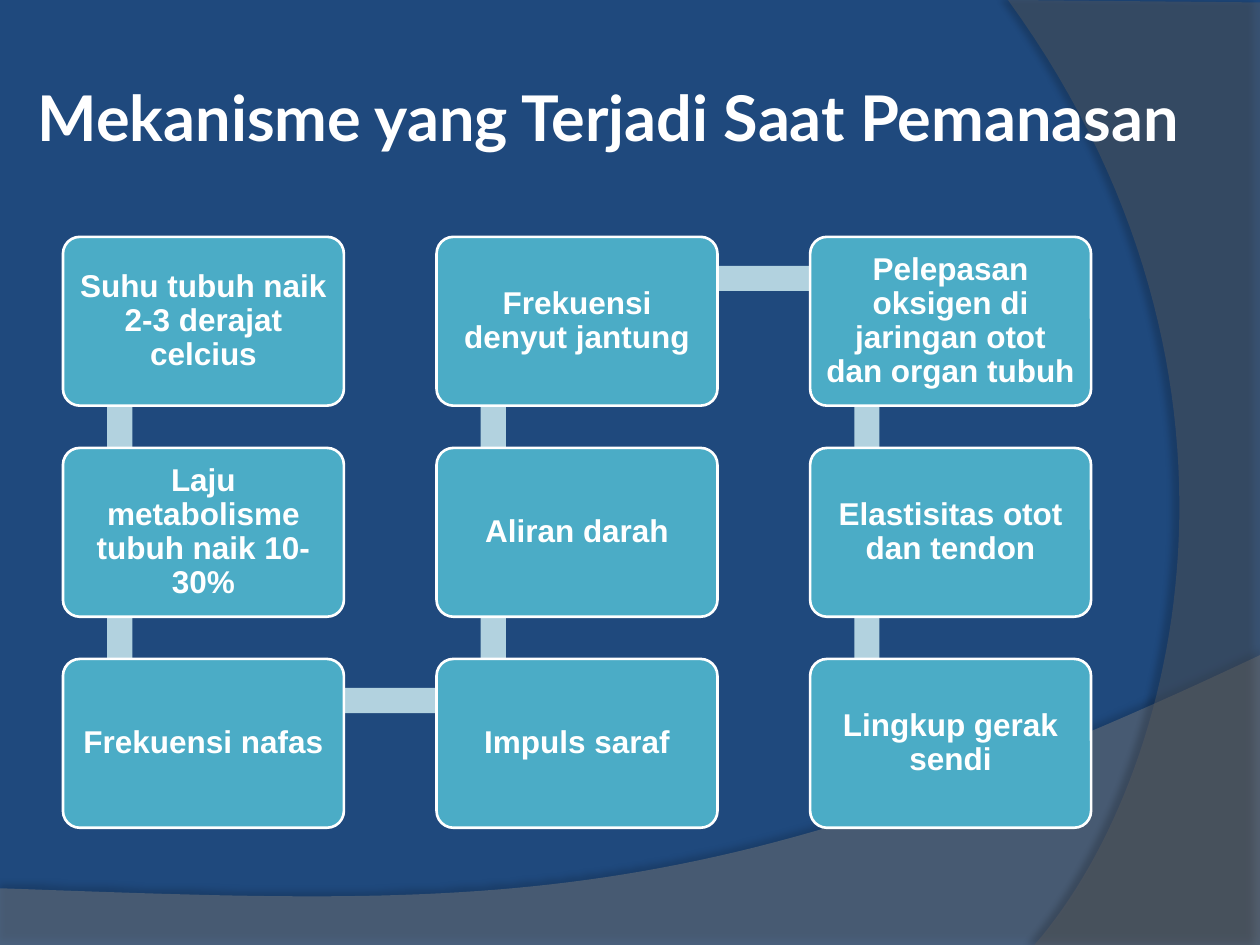
from lxml import etree
from pptx import Presentation
from pptx.dml.color import RGBColor
from pptx.enum.shapes import MSO_SHAPE
from pptx.enum.text import MSO_ANCHOR, PP_ALIGN
from pptx.oxml import parse_xml
from pptx.oxml.ns import nsdecls, qn
from pptx.util import Inches, Pt

NAVY = RGBColor(0x1F, 0x49, 0x7D)
GRAY = RGBColor(0x7F, 0x7F, 0x7F)
DARK_GRAY = RGBColor(0x5E, 0x5E, 0x5E)
TEAL = RGBColor(0x4B, 0xAC, 0xC6)
PALE_TEAL = RGBColor(0xB2, 0xD2, 0xDF)
WHITE = RGBColor(0xFF, 0xFF, 0xFF)

TITLE = "Mekanisme yang Terjadi Saat Pemanasan"
STEPS = [
    "Suhu tubuh naik 2-3 derajat celcius",
    "Laju metabolisme tubuh naik 10-30%",
    "Frekuensi nafas",
    "Impuls saraf",
    "Aliran darah",
    "Frekuensi denyut jantung",
    "Pelepasan oksigen di jaringan otot dan organ tubuh",
    "Elastisitas otot dan tendon",
    "Lingkup gerak sendi",
]
ROWS = 3
BOX_W, BOX_H = 2.23, 1.34
BAR_THICKNESS = 0.2


def curve(p0, p1, p2, p3, steps=60):
    """Points along a cubic Bezier curve."""
    points = []
    for i in range(steps + 1):
        t = i / steps
        u = 1 - t
        points.append(tuple(
            u**3 * a + 3 * u**2 * t * b + 3 * u * t**2 * c + t**3 * d
            for a, b, c, d in zip(p0, p1, p2, p3)))
    return points


def set_insets(tf, inset):
    tf.margin_left = tf.margin_right = Inches(inset)
    tf.margin_top = tf.margin_bottom = Inches(inset)


def add_wave(s, points, color, opacity, shadow_opacity, distance, direction):
    points = [(Inches(x), Inches(y)) for x, y in points]
    builder = s.shapes.build_freeform(*points[0])
    builder.add_line_segments(points[1:], close=True)
    sp = builder.convert_to_shape()
    sp.fill.solid()
    sp.fill.fore_color.rgb = color
    sp.line.fill.background()
    # Transparent fill and soft shadow
    srgb = sp.fill._xPr.find(f"{qn('a:solidFill')}/{qn('a:srgbClr')}")
    etree.SubElement(srgb, qn("a:alpha"), val=str(opacity * 1000))
    sp._element.spPr.append(parse_xml(
        f'<a:effectLst {nsdecls("a")}>'
        f'<a:outerShdw blurRad="{Pt(4)}" dist="{Pt(distance)}" '
        f'dir="{direction * 60000}" algn="ctr" rotWithShape="0">'
        f'<a:srgbClr val="000000"><a:alpha val="{shadow_opacity * 1000}"/>'
        '</a:srgbClr></a:outerShdw></a:effectLst>'))


def add_background(s, width, height):
    s.background.fill.solid()
    s.background.fill.fore_color.rgb = NAVY
    # Bottom wave
    bottom = [(0, height), (width, height)]
    bottom += curve((width, 5.2), (5.59, 7.29), (3.91, 7.19), (0, 7.05))
    add_wave(s, bottom, GRAY, 45, 35, 3.5, 270)
    # Right wave
    right = [(width, 0.02), (width, height)]
    right += curve((8.21, height), (9.35, 6.19), (10.18, 3), (8, 0))
    add_wave(s, right, DARK_GRAY, 40, 45, 4, 180)


def add_title(s, x, y, w, h):
    box = s.shapes.add_textbox(Inches(x), Inches(y), Inches(w), Inches(h))
    tf = box.text_frame
    tf.word_wrap = True
    tf.vertical_anchor = MSO_ANCHOR.MIDDLE
    set_insets(tf, 0.05)
    p = tf.paragraphs[0]
    p.text = TITLE
    p.font.name, p.font.size, p.font.bold = "Lato", Pt(36), True
    p.font.color.rgb = WHITE


def add_bar(s, center_x, center_y, length, rotation=0):
    sp = s.shapes.add_shape(
        MSO_SHAPE.RECTANGLE,
        Inches(center_x - length / 2), Inches(center_y - BAR_THICKNESS / 2),
        Inches(length), Inches(BAR_THICKNESS))
    sp.rotation = rotation
    sp.shadow.inherit = False
    sp.fill.solid()
    sp.fill.fore_color.rgb = PALE_TEAL
    sp.line.fill.background()


def add_step(s, text, x, y):
    sp = s.shapes.add_shape(MSO_SHAPE.ROUNDED_RECTANGLE, Inches(x), Inches(y),
                            Inches(BOX_W), Inches(BOX_H))
    sp.adjustments[0] = 0.1
    sp.shadow.inherit = False
    sp.fill.solid()
    sp.fill.fore_color.rgb = TEAL
    sp.line.color.rgb = WHITE
    sp.line.width = Pt(1.5)
    tf = sp.text_frame
    tf.word_wrap = True
    tf.vertical_anchor = MSO_ANCHOR.MIDDLE
    set_insets(tf, 0.07)
    p = tf.paragraphs[0]
    p.text = text
    p.alignment = PP_ALIGN.CENTER
    p.line_spacing = 0.9
    p.font.name, p.font.size, p.font.bold = "Arial", Pt(18), True
    p.font.color.rgb = WHITE


def add_process(s, x, y, w, h):
    """Steps run down the first column, up the second, down the third."""
    columns = len(STEPS) // ROWS
    pitch_x = (w - BOX_W) / (columns - 1)
    pitch_y = (h - BOX_H) / (ROWS - 1)
    spots = []
    for i in range(len(STEPS)):
        col, row = divmod(i, ROWS)
        if col % 2:
            row = ROWS - 1 - row
        spots.append((x + col * pitch_x, y + row * pitch_y))

    # Bars linking each step to the next
    for (x1, y1), (x2, y2) in zip(spots, spots[1:]):
        if x1 == x2:
            rotation = 90 if y2 > y1 else 270
            add_bar(s, x1 + 0.45, (y1 + y2) / 2 + 0.33, pitch_y - 0.01, rotation)
        else:
            add_bar(s, (x1 + x2) / 2 + 0.45, y1 + 0.33, pitch_x - 0.01)

    # Step boxes
    for text, (left, top) in zip(STEPS, spots):
        add_step(s, text, left, top)


def main():
    prs = Presentation()
    prs.slide_width, prs.slide_height = Inches(10), Inches(7.5)
    s = prs.slides.add_slide(prs.slide_layouts[6])
    add_background(s, 10, 7.5)
    add_title(s, 0.25, 0.3, 9.42, 1.25)
    add_process(s, 0.5, 1.88, 8.16, 4.69)
    prs.save("out.pptx")


if __name__ == "__main__":
    main()
